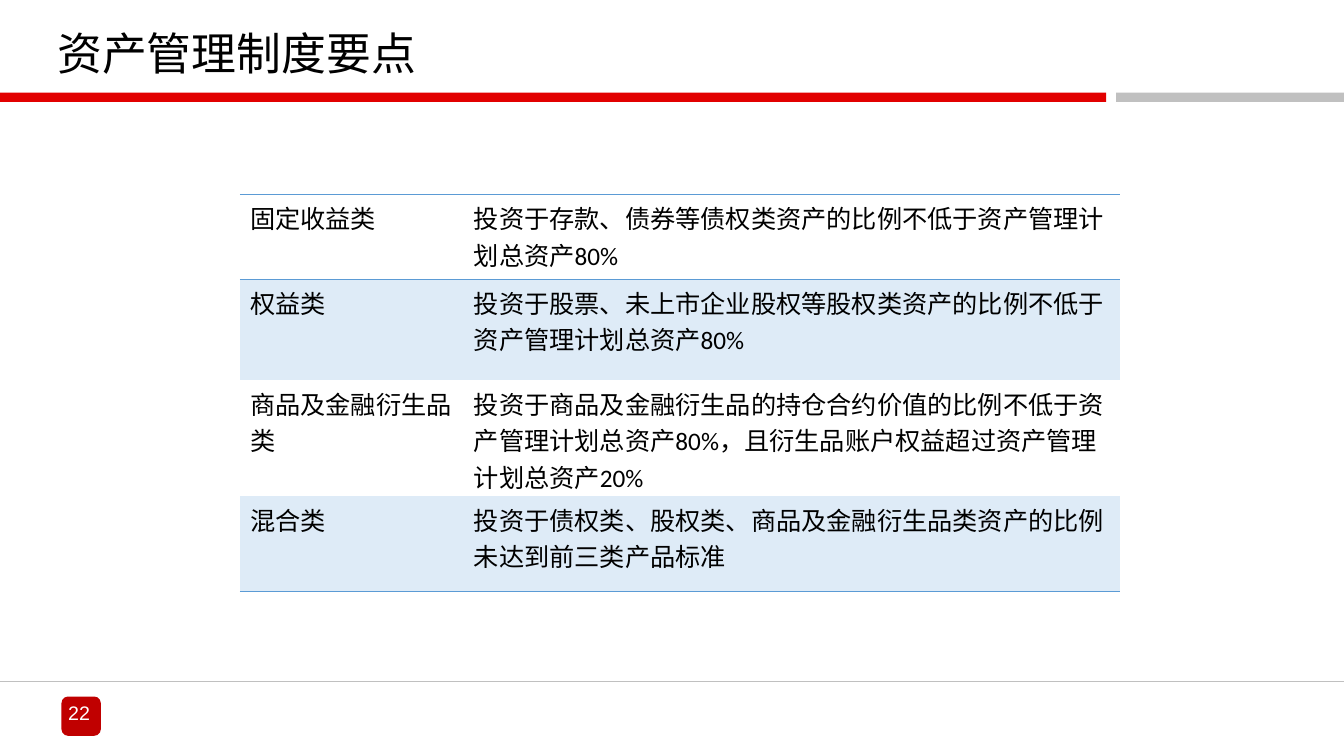
import pptx
import pptx.util
import pptx.dml.color
import pptx.enum.shapes
import pptx.enum.text
import pptx.oxml.ns
from lxml import etree

RGB = pptx.dml.color.RGBColor
BLACK = RGB(0x00, 0x00, 0x00)
WHITE = RGB(0xFF, 0xFF, 0xFF)
RED = RGB(0xE2, 0x00, 0x00)
DARK = RGB(0xC0, 0x00, 0x00)
GREY = RGB(0xC0, 0xC0, 0xC0)
BLUE = RGB(0x5B, 0x9B, 0xD5)
PALE = RGB(0xDE, 0xEB, 0xF7)

WIDE, HIGH = 13.33, 7.5
HAN = "Noto Sans CJK SC"
KIND = pptx.enum.shapes.MSO_SHAPE
ANCHOR = pptx.enum.text.MSO_ANCHOR
ALIGN = pptx.enum.text.PP_ALIGN
Inches = pptx.util.Inches
qn = pptx.oxml.ns.qn

ROWS = [
    ("固定收益类", "投资于存款、债券等债权类资产的比例不低于资产管理计划总资产80%"),
    ("权益类", "投资于股票、未上市企业股权等股权类资产的比例不低于资产管理计划总资产80%"),
    ("商品及金融衍生品类", "投资于商品及金融衍生品的持仓合约价值的比例不低于资产管理计划总资产80%，"
     "且衍生品账户权益超过资产管理计划总资产20%"),
    ("混合类", "投资于债权类、股权类、商品及金融衍生品类资产的比例未达到前三类产品标准"),
]
COLS = (2.22, 6.51)
TALL = (0.84, 1, 1.15, 0.95)


def style(par, face, size, color):
    for run in par.runs:
        run.font.size = pptx.util.Pt(size)
        run.font.color.rgb = color
        run.font.name = face
        etree.SubElement(run.font._element, qn("a:ea"), typeface=HAN)


def block(slide, kind, box, color):
    shape = slide.shapes.add_shape(kind, *map(Inches, box))
    shape.shadow.inherit = False
    shape.fill.solid()
    shape.fill.fore_color.rgb = color
    shape.line.fill.background()


def label(slide, box, text, face, size, color, anchor):
    frame = slide.shapes.add_textbox(*map(Inches, box)).text_frame
    frame.word_wrap = True
    frame.vertical_anchor = anchor
    par = frame.paragraphs[0]
    par.text = text
    style(par, face, size, color)
    return par


def header(slide, box):
    left, top, wide, high = box
    bar = 0.09
    long, gap = wide * 0.823, 0.1
    par = label(slide, (left + 0.47, top + 0.12, 11, 0.72), "资产管理制度要点",
                "Times New Roman", 32, BLACK, ANCHOR.BOTTOM)
    par.line_spacing = 0.9
    # Red and grey rule under the title
    base = top + high - bar
    block(slide, KIND.RECTANGLE, (left, base, long, bar), RED)
    block(slide, KIND.RECTANGLE, (left + long + gap, base, wide - long - gap, bar), GREY)


def footer(slide, box):
    left, top, wide, high = box
    line = slide.shapes.add_connector(
        pptx.enum.shapes.MSO_CONNECTOR.STRAIGHT,
        *map(Inches, (left, top, left + wide, top)))
    line.line.color.rgb = GREY
    line.line.width = pptx.util.Pt(1)
    etree.SubElement(line._element.spPr, qn("a:effectLst"))
    # Page number on its badge
    block(slide, KIND.ROUNDED_RECTANGLE, (left + 0.61, top + 0.15, 0.39, 0.39), DARK)
    par = label(slide, (left + 0.31, top + 0.13, 0.95, 0.37), "22",
                "Arial", 14, WHITE, ANCHOR.MIDDLE)
    par.alignment = ALIGN.CENTER


def edges(cell, shown):
    props = cell._tc.get_or_add_tcPr()
    for spot, side in enumerate("LRTB"):
        line = etree.Element(qn("a:ln" + side), w="12700")
        if side in shown:
            fill = etree.SubElement(line, qn("a:solidFill"))
            etree.SubElement(fill, qn("a:srgbClr"), val=str(BLUE))
        else:
            etree.SubElement(line, qn("a:noFill"))
        props.insert(spot, line)


def grid(slide, box):
    table = slide.shapes.add_table(len(ROWS), len(COLS), *map(Inches, box)).table
    table.first_row = table.horz_banding = False
    for col, wide in zip(table.columns, COLS):
        col.width = Inches(wide)
    # Blue lines frame the first row and close the last
    sides = {0: "TB", 1: "T", len(ROWS) - 1: "B"}
    for num, words in enumerate(ROWS):
        table.rows[num].height = Inches(TALL[num])
        for col, text in enumerate(words):
            cell = table.cell(num, col)
            par = cell.text_frame.paragraphs[0]
            par.text = text
            style(par, "Calibri", 18, BLACK)
            if num % 2:
                cell.fill.solid()
                cell.fill.fore_color.rgb = PALE
            else:
                cell.fill.background()
            edges(cell, sides.get(num, ""))


def main():
    deck = pptx.Presentation()
    deck.slide_width, deck.slide_height = Inches(WIDE), Inches(HIGH)
    slide = deck.slides.add_slide(deck.slide_layouts[6])
    header(slide, (0, 0, WIDE, 1.01))
    grid(slide, (2.38, 1.93, sum(COLS), sum(TALL)))
    footer(slide, (0, 6.76, WIDE, HIGH - 6.76))
    deck.save("out.pptx")


if __name__ == "__main__":
    main()
